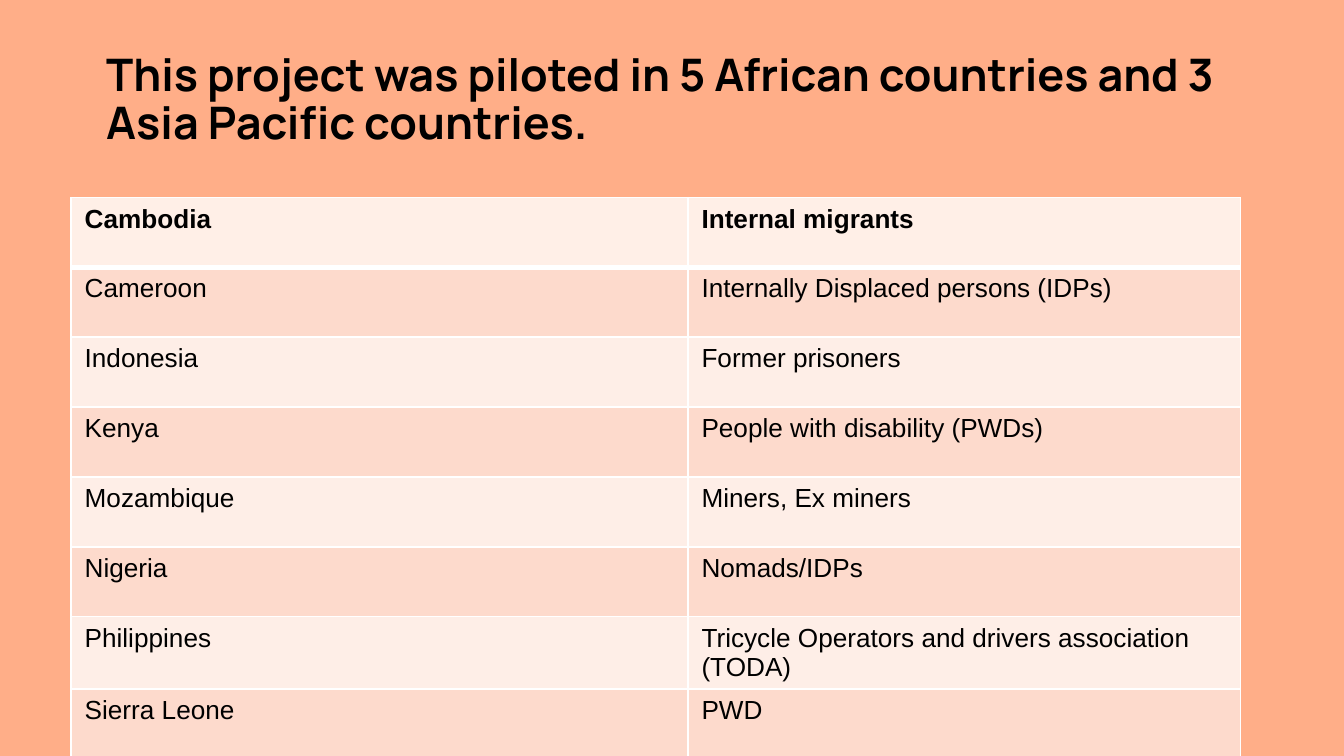
from typing import NamedTuple

from lxml.etree import SubElement
from pptx import Presentation
from pptx.dml.color import RGBColor
from pptx.enum.text import MSO_ANCHOR as Anchor, MSO_AUTO_SIZE as AutoSize, PP_ALIGN as Align
from pptx.oxml.ns import qn
from pptx.util import Pt

BACKGROUND, BLACK, WHITE = "FFAE88", "000000", "FFFFFF"
HEADER_FILL = "FFEFE7"
BAND_FILLS = ("FEEEE7", "FDDACC")
TABLE_LEFT, TABLE_TOP = 38.16, 105.84
COLUMN_WIDTHS = (330.48, 295.92)
ROW_HEIGHT = 37.44


class Pilot(NamedTuple):
    country: str
    group: str


PILOTS = [
    Pilot("Cambodia", "Internal migrants"),
    Pilot("Cameroon", "Internally Displaced persons (IDPs)"),
    Pilot("Indonesia", "Former prisoners"),
    Pilot("Kenya", "People with disability (PWDs)"),
    Pilot("Mozambique", "Miners, Ex miners"),
    Pilot("Nigeria", "Nomads/IDPs"),
    Pilot("Philippines", "Tricycle Operators and drivers association (TODA)"),
    Pilot("Sierra Leone", "PWD"),
]


def set_fill(fill, color: str) -> None:
    fill.solid()
    fill.fore_color.rgb = RGBColor.from_string(color)


def set_font(p, name: str, size: float, bold: bool) -> None:
    p.font.name, p.font.size, p.font.bold = name, Pt(size), bold
    p.font.color.rgb = RGBColor.from_string(BLACK)


def set_borders(cell, top: float, bottom: float) -> None:
    tc_pr = cell._tc.get_or_add_tcPr()
    for side, width in (("L", 1), ("R", 1), ("T", top), ("B", bottom)):
        line = SubElement(tc_pr, qn(f"a:ln{side}"), w=str(Pt(width)))
        SubElement(SubElement(line, qn("a:solidFill")), qn("a:srgbClr"), val=WHITE)


def fill_cell(cell, text: str, row: int) -> None:
    header = row == 0
    set_borders(cell, top=3 if row == 1 else 1, bottom=3 if header else 1)
    set_fill(cell.fill, HEADER_FILL if header else BAND_FILLS[row % 2])
    cell.text = text
    set_font(cell.text_frame.paragraphs[0], "Arial", 14, header)


def add_title(s, text: str) -> None:
    title = s.shapes.title
    title.left, title.top, title.width, title.height = map(Pt, (49.68, 20.88, 654.48, 341.28))
    tf = title.text_frame
    tf.margin_left = tf.margin_right = tf.margin_top = tf.margin_bottom = Pt(7.2)
    tf.word_wrap, tf.auto_size, tf.vertical_anchor = True, AutoSize.NONE, Anchor.TOP
    tf.text = text
    p = tf.paragraphs[0]
    p.alignment, p.line_spacing = Align.LEFT, 0.9
    set_font(p, "Manrope", 24, True)


def add_pilot_table(s, pilots: list[Pilot]) -> None:
    size = sum(COLUMN_WIDTHS), ROW_HEIGHT * len(pilots)
    frame = s.shapes.add_table(len(pilots), len(COLUMN_WIDTHS),
                               *map(Pt, (TABLE_LEFT, TABLE_TOP, *size)))
    table = frame.table
    for column, width in zip(table.columns, COLUMN_WIDTHS):
        column.width = Pt(width)
    for row, pilot in enumerate(pilots):
        table.rows[row].height = Pt(ROW_HEIGHT)
        for col, text in enumerate(pilot):
            fill_cell(table.cell(row, col), text, row)


def main() -> None:
    prs = Presentation()
    prs.slide_width, prs.slide_height = Pt(720), Pt(405)
    s = prs.slides.add_slide(prs.slide_layouts[5])
    set_fill(s.background.fill, BACKGROUND)

    # Heading, then the countries with their target groups
    add_title(s, "This project was piloted in 5 African countries and 3 Asia Pacific countries.")
    add_pilot_table(s, PILOTS)
    prs.save("out.pptx")


if __name__ == "__main__":
    main()
